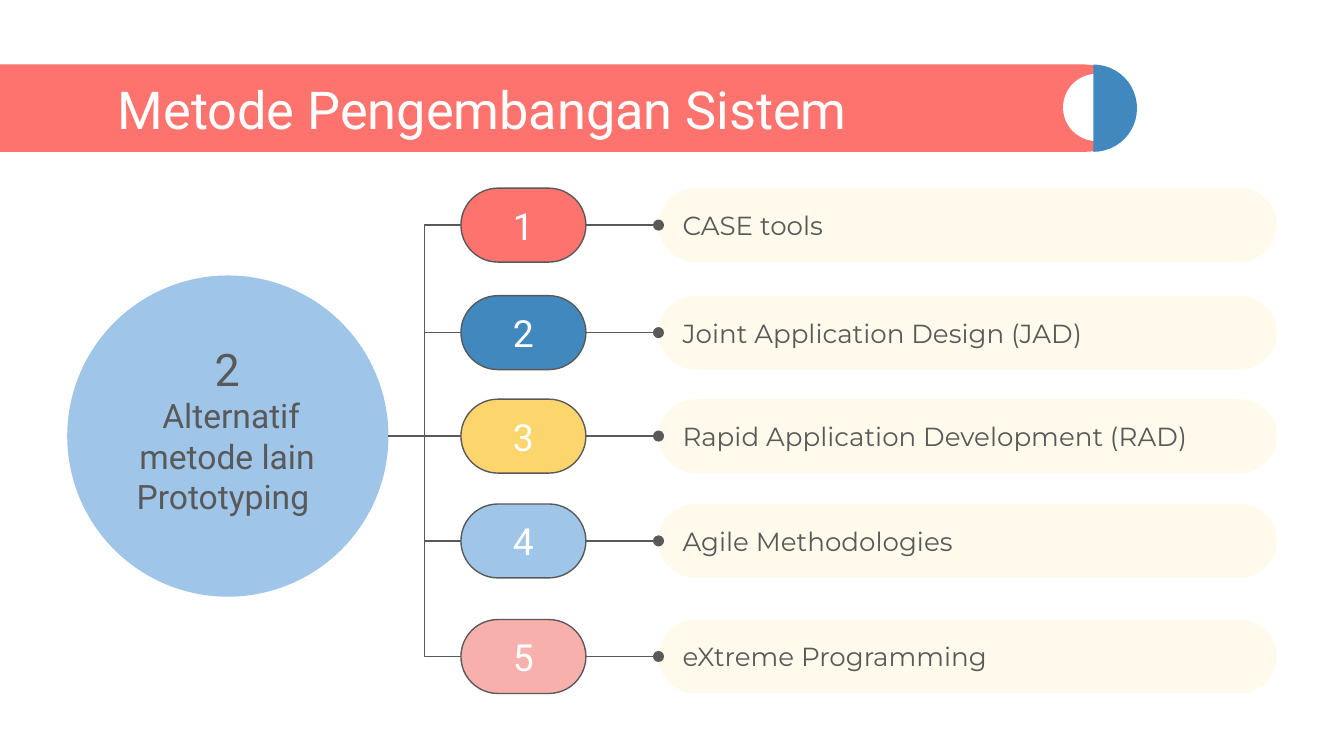
"""Builds the slide on alternative system development methods."""
from lxml.etree import SubElement
from pptx import Presentation
from pptx.dml.color import RGBColor
from pptx.enum.shapes import MSO_CONNECTOR as Connector, MSO_SHAPE as Shape
from pptx.enum.text import MSO_ANCHOR as Anchor, PP_ALIGN as Align
from pptx.oxml.ns import qn
from pptx.util import Inches, Pt

COLORS = {
    "coral": "FF736E",
    "blue": "4088BE",
    "yellow": "FCD66C",
    "sky": "9FC5E8",
    "pink": "F8B0AD",
    "cream": "FFFAEB",
    "white": "FFFFFF",
    "gray": "595959",
}
METHODS = [
    (1.4, "coral", "CASE tools"),
    (2.2, "blue", "Joint Application Design (JAD)"),
    (2.97, "yellow", "Rapid Application Development (RAD)"),
    (3.75, "sky", "Agile Methodologies"),
    (4.61, "pink", "eXtreme Programming"),
]
ROW_HEIGHT = 0.55


def rgb(name):
    return RGBColor.from_string(COLORS[name])


def add_text(box, text, size, font="Roboto", color="gray", align=Align.LEFT, new_para=False):
    frame = box.text_frame
    para = frame.add_paragraph() if new_para else frame.paragraphs[0]
    para.alignment = align
    span = para.add_run()
    span.text = text
    span.font.size = Pt(size)
    span.font.name = font
    span.font.color.rgb = rgb(color)


def set_frame(box, anchor):
    frame = box.text_frame
    frame.word_wrap = True
    frame.vertical_anchor = anchor
    frame.margin_left = frame.margin_right = Inches(0.1)
    frame.margin_top = frame.margin_bottom = Inches(0.1)


def add_box(page, left, top, width, height, anchor=Anchor.MIDDLE):
    box = page.shapes.add_textbox(Inches(left), Inches(top), Inches(width), Inches(height))
    set_frame(box, anchor)
    return box


def add_figure(page, kind, left, top, width, height, fill, outlined=False):
    figure = page.shapes.add_shape(kind, Inches(left), Inches(top), Inches(width), Inches(height))
    figure.shadow.inherit = False
    figure.fill.solid()
    figure.fill.fore_color.rgb = rgb(fill)
    if outlined:
        figure.line.color.rgb = rgb("gray")
        figure.line.width = Pt(0.75)
    else:
        figure.line.fill.background()
    set_frame(figure, Anchor.MIDDLE)
    return figure


def add_pill(page, left, top, width, height, fill, outlined=False):
    pill = add_figure(page, Shape.ROUNDED_RECTANGLE, left, top, width, height, fill, outlined)
    pill.adjustments[0] = 0.5
    return pill


def add_link(page, source, target, dotted=False):
    start = source.left + source.width, source.top + source.height // 2
    end = target.left, target.top + target.height // 2
    link = page.shapes.add_connector(Connector.ELBOW, *start, *end)
    link.end_connect(target, 1)
    link.line.color.rgb = rgb("gray")
    link.line.width = Pt(0.75)
    properties = link._element.spPr
    if dotted:
        link.begin_connect(source, 3)
        SubElement(properties.find(qn("a:ln")), qn("a:tailEnd"), type="oval")
    SubElement(properties, qn("a:effectLst"))


def add_header(page):
    add_pill(page, -0.32, 0.48, 8.72, 0.65, "coral")
    add_figure(page, Shape.OVAL, 7.91, 0.55, 0.5, 0.5, "white")
    half = add_figure(page, Shape.PIE, 7.81, 0.48, 0.65, 0.65, "blue")
    half.adjustments[0], half.adjustments[1] = 54, 162
    half.rotation = 180
    title = add_box(page, 0.78, 0.6, 6.97, 0.41)
    add_text(title, "Metode Pengembangan Sistem", 28, color="white")


def add_hub(page):
    hub = add_figure(page, Shape.OVAL, 0.5, 2.05, 2.39, 2.39, "sky")
    box = add_box(page, 0.72, 2.44, 1.94, 1.05, Anchor.TOP)
    add_text(box, "2", 24, align=Align.CENTER)
    add_text(box, " Alternatif metode lain Prototyping ", 18, align=Align.CENTER, new_para=True)
    return hub


def add_method(page, number, top, color, name):
    label = add_pill(page, 4.9, top, 4.6, ROW_HEIGHT, "cream")
    add_text(label, name, 14, font="Montserrat")
    badge = add_pill(page, 3.43, top, 0.93, ROW_HEIGHT, color, outlined=True)
    add_text(badge, str(number), 20, color="white", align=Align.CENTER)
    return badge, label


def main():
    deck = Presentation()
    deck.slide_width = Inches(10)
    deck.slide_height = deck.slide_width * 9 // 16
    page = deck.slides.add_slide(deck.slide_layouts[6])
    add_header(page)
    hub = add_hub(page)
    rows = [add_method(page, number, *method) for number, method in enumerate(METHODS, 1)]
    for badge, _ in rows:
        add_link(page, hub, badge)
    for badge, label in rows:
        add_link(page, badge, label, dotted=True)
    deck.save("out.pptx")


if __name__ == "__main__":
    main()
